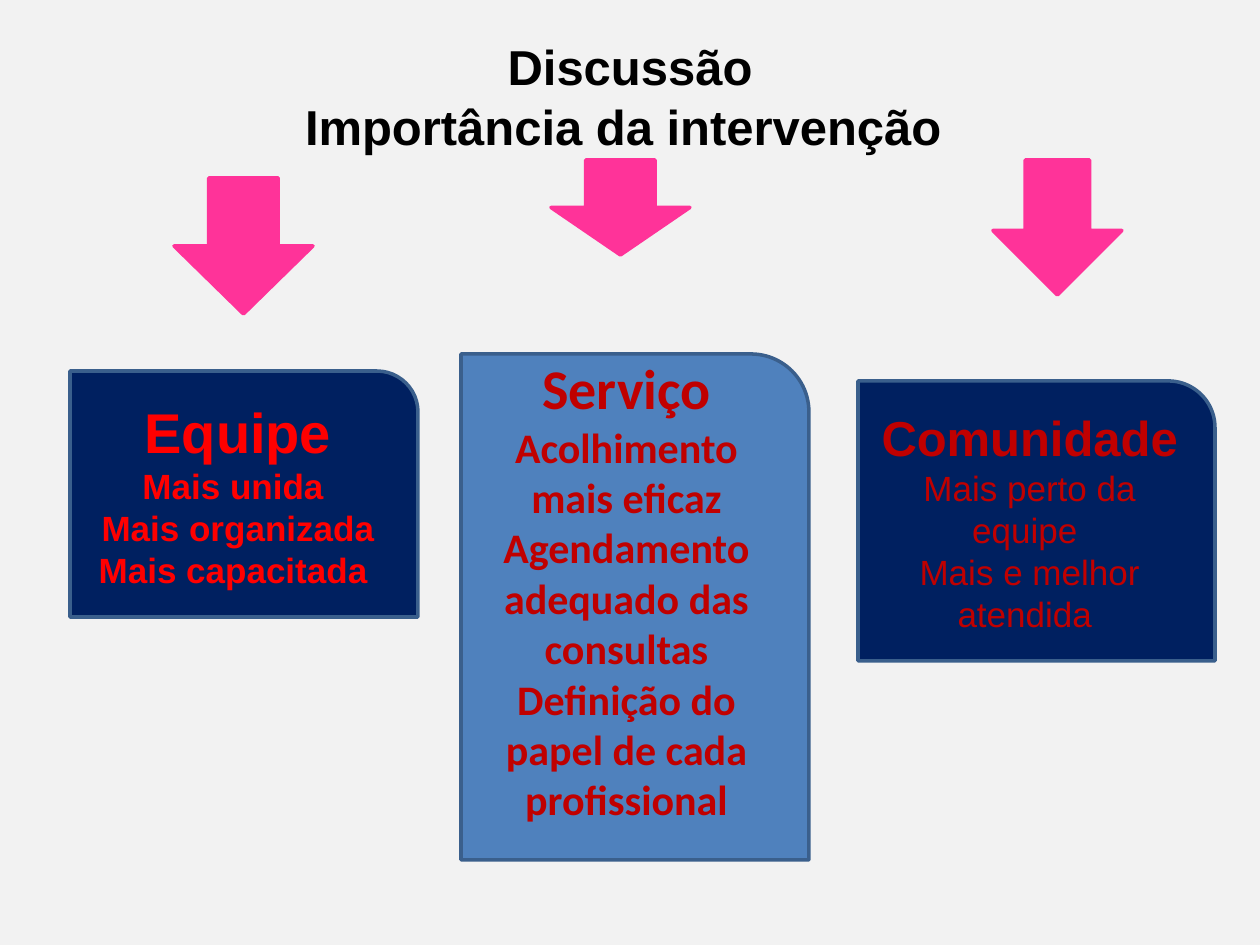
from pptx import Presentation
from pptx.dml.color import RGBColor
from pptx.enum.shapes import MSO_SHAPE
from pptx.enum.text import MSO_ANCHOR, PP_ALIGN
from pptx.util import Emu, Pt

DOWN_ARROW, ROUND_CORNER = MSO_SHAPE.DOWN_ARROW, MSO_SHAPE.ROUND_1_RECTANGLE
TOP, MIDDLE, CENTER = MSO_ANCHOR.TOP, MSO_ANCHOR.MIDDLE, PP_ALIGN.CENTER
PX = 914400 // 126

THEME = {
    "background": "F2F2F2", "title": "000000", "arrow": "FF3399",
    "border": "3A5F8C", "navy": "002060", "blue": "4F81BD",
    "red": "FF0000", "dark_red": "C00000",
    "title_size": 28, "title_spacing": 34, "line_width": 2,
    "font": "Arial", "service_font": "Calibri",
}

# Boxes are left, top, width, height in px
TITLE = ["Discussão", "Importância da intervenção "]
TITLE_BOX = (63, 36, 1134, 119)
ARROWS = [(174, 178, 139, 136), (551, 160, 139, 95), (993, 160, 129, 135)]
CARDS = [
    {"box": (70, 371, 348, 246), "fill": "navy", "color": "red", "font": "font",
     "heading": "Equipe", "heading_size": 32, "item_size": 20, "item_bold": True,
     "items": ["Mais unida ", "Mais organizada", "Mais capacitada "],
     "frame": {"vertical_anchor": MIDDLE}},
    {"box": (461, 354, 348, 506), "fill": "blue", "color": "dark_red",
     "font": "service_font",
     "heading": "Serviço", "heading_size": 32, "item_size": 24, "item_bold": True,
     "items": ["Acolhimento mais eficaz", "Agendamento adequado das consultas",
               "Definição do papel de cada profissional"],
     "frame": {"vertical_anchor": TOP, "margin_top": 0}},
    {"box": (858, 381, 357, 280), "fill": "navy", "color": "dark_red", "font": "font",
     "heading": "Comunidade", "heading_size": 28, "item_size": 20, "item_bold": False,
     "items": ["Mais perto da equipe ", "Mais e melhor atendida "],
     "frame": {"vertical_anchor": MIDDLE}},
]


def rgb(name):
    return RGBColor.from_string(THEME[name])


def emu(box):
    return [Emu(value * PX) for value in box]


def apply(target, formats):
    for attribute, value in formats.items():
        setattr(target, attribute, value)


def write(frame, lines, font, color, frame_format, spacing=None):
    """Fill a frame with centred (text, size, bold) lines."""
    apply(frame, {"word_wrap": True, **frame_format})
    for index, (text, size, bold) in enumerate(lines):
        paragraph = frame.add_paragraph() if index else frame.paragraphs[0]
        apply(paragraph, {"alignment": CENTER, "line_spacing": spacing})
        run = paragraph.add_run()
        run.text = text
        apply(run.font, {"name": THEME[font], "size": Pt(size), "bold": bold})
        run.font.color.rgb = rgb(color)


def add_filled(slide, kind, box, fill, line):
    shape = slide.shapes.add_shape(kind, *emu(box))
    shape.shadow.inherit = False
    shape.fill.solid()
    shape.fill.fore_color.rgb = rgb(fill)
    shape.line.color.rgb = rgb(line)
    shape.line.width = Pt(THEME["line_width"])
    return shape


def add_title(slide):
    title = slide.shapes.title
    apply(title, dict(zip(("left", "top", "width", "height"), emu(TITLE_BOX))))
    lines = [(text, THEME["title_size"], True) for text in TITLE]
    write(title.text_frame, lines, "font", "title",
          {"vertical_anchor": TOP, "margin_top": 0, "margin_bottom": 0},
          Pt(THEME["title_spacing"]))


def add_card(slide, card):
    shape = add_filled(slide, ROUND_CORNER, card["box"], card["fill"], "border")
    lines = [(card["heading"], card["heading_size"], True)]
    lines += [(item, card["item_size"], card["item_bold"]) for item in card["items"]]
    write(shape.text_frame, lines, card["font"], card["color"], card["frame"])


def main():
    deck = Presentation()
    deck.slide_width, deck.slide_height = emu((1260, 945))
    slide = deck.slides.add_slide(deck.slide_layouts[5])
    slide.background.fill.solid()
    slide.background.fill.fore_color.rgb = rgb("background")
    add_title(slide)
    for box in ARROWS:
        add_filled(slide, DOWN_ARROW, box, "arrow", "arrow")
    for card in CARDS:
        add_card(slide, card)
    deck.save("out.pptx")


if __name__ == "__main__":
    main()
